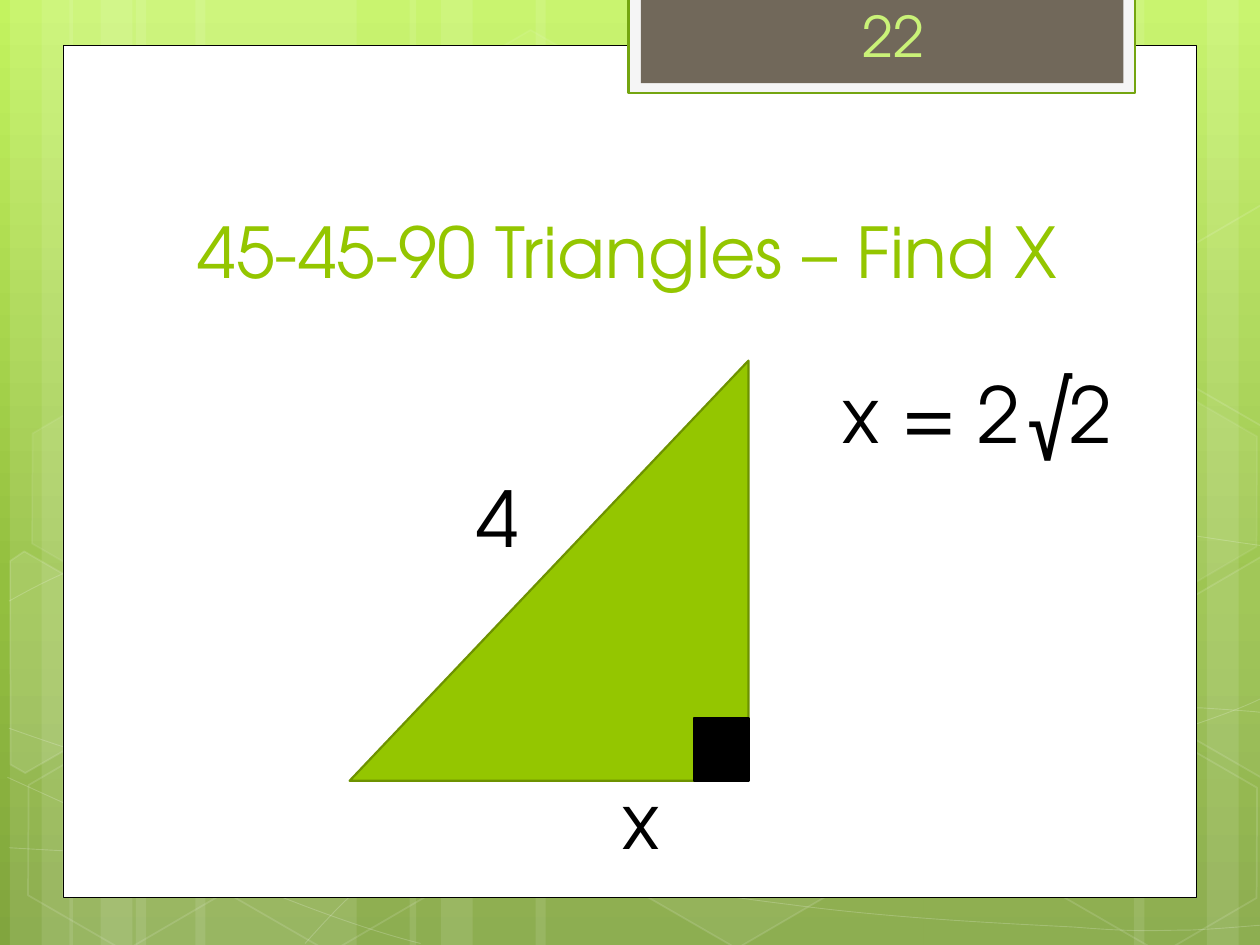
"""Build the 45-45-90 triangle slide."""
from copy import deepcopy

from lxml.etree import SubElement
from pptx import Presentation
from pptx.dml.color import RGBColor
from pptx.enum.shapes import MSO_SHAPE as Shape
from pptx.enum.text import MSO_ANCHOR as Anchor, PP_ALIGN as Align
from pptx.oxml.ns import qn
from pptx.util import Cm, Pt

FONT = "TeX Gyre Adventor"
WIDTH, HEIGHT = 25.4, 19.05
SPACE = 0.43
COLORS = {
    "top": "C3F35F", "middle": "93BF3F", "bottom": "81A53E",
    "white": "FFFFFF", "black": "000000", "frame": "F5F5F5",
    "frame_line": "74A510", "tab": "71685A", "number": "CAF278",
    "green": "94C600", "dark_green": "6D9200",
}
BANDS = [(2.74, 4.45), (0.2, 1.27), (0.84, 2.11), (3.94, 4.45), (1.4, 1.27), (2.03, 2.11),
         (18.62, 4.45), (24.33, 1.27), (22.86, 2.11), (10.8, 7.82), (8.26, 1.27), (8.89, 2.11)]
CURVES = [
    [(0.18, 17.09), (1.55, 17.17), (2.92, 17.25), (4.83, 17.22), (6.73, 17.2), (9.09, 17.15),
     (11.63, 16.89), (14.17, 16.64), (17.78, 16.13), (20.12, 15.67), (22.43, 15.19),
     (24.82, 14.43), (25.58, 14)],
    [(0.18, 12.12), (0.91, 11.71), (1.65, 11.33), (3.07, 10.95), (4.52, 10.57), (6.58, 10.01),
     (8.81, 9.83), (11.07, 9.65), (13.82, 9.63), (16.61, 9.83), (19.41, 10.03),
     (24.05, 10.82), (25.58, 11.02)],
    [(0.15, 15.67), (3.23, 17.07), (6.27, 18.47), (8.48, 19.02)],
    [(0.18, 14.68), (0.97, 14.96), (1.78, 15.24), (3.25, 15.65), (4.72, 16.03), (6.93, 16.66),
     (9.07, 17.09), (11.18, 17.53), (13.84, 17.98), (15.95, 18.24), (18.06, 18.52),
     (20.32, 18.62), (21.67, 18.69), (22.99, 18.8), (23.34, 18.75), (24, 18.75),
     (24.66, 18.72), (25.12, 18.67), (25.58, 18.64)],
    [(6.15, 19.02), (6.6, 18.52), (7.06, 18.01), (7.67, 17.55), (8.28, 17.09), (9.14, 16.59),
     (9.86, 16.23), (10.57, 15.88), (11, 15.72), (11.94, 15.47), (12.85, 15.21),
     (14.55, 14.86), (15.44, 14.68), (16.36, 14.5), (16.48, 14.5), (17.27, 14.45),
     (18.06, 14.38), (19.3, 14.27), (20.17, 14.25), (21.06, 14.22), (22.5, 14.27),
     (22.5, 14.27), (23.07, 14.27), (23.64, 14.27), (24.21, 14.27), (24.66, 14.3),
     (25.1, 14.33), (25.32, 14.35), (25.55, 14.38), (25.48, 14.35), (25.55, 14.38)],
]
HEXAGONS = [(8.48, 0.91, 4, 8), (12.62, 14.96, 6, 12), (0.28, 15.01, 0, 12), (0.36, 7.92, 7, 8),
            (4.42, 15.04, 0, 12), (19.13, 11.51, 10, 12), (21.18, 15.06, 0, 12),
            (21.18, 7.98, 7, 8)]
LEFT_CUT = [(0, 0.31), (0.15, 0), (2.4, 0), (3.51, 1.95), (2.4, 3.86), (2.06, 3.86)]
RIGHT_CUT = [(0, 1.91), (1.09, 0), (1.33, 0), (3.45, 3.67), (3.35, 3.86), (1.12, 3.86)]
CUT_HEXAGONS = [(LEFT_CUT, -0.84, 11.66, 10), (RIGHT_CUT, 23.29, 11.28, 4),
                (RIGHT_CUT, 23.29, 4.19, 0)]


def rgb(name):
    """Return the named colour."""
    return RGBColor.from_string(COLORS[name])


def set_alpha(sp, where, percent):
    """Set the opacity of a solid fill or line."""
    color = sp.element.spPr.find(f"{where}/{qn('a:srgbClr')}")
    SubElement(color, qn("a:alpha")).set("val", str(percent * 1000))


def style(sp, fill=None, line=None, width=1.25, fill_alpha=100, line_alpha=100):
    """Apply fill, line and opacity to a shape."""
    sp.shadow.inherit = False
    if fill and fill_alpha:
        sp.fill.solid()
        sp.fill.fore_color.rgb = rgb(fill)
        if fill_alpha < 100:
            set_alpha(sp, qn("a:solidFill"), fill_alpha)
    else:
        sp.fill.background()
    if line:
        sp.line.color.rgb = rgb(line)
        sp.line.width = Pt(width)
        if line_alpha < 100:
            set_alpha(sp, f"{qn('a:ln')}/{qn('a:solidFill')}", line_alpha)
    else:
        sp.line.fill.background()


def add_box(shapes, kind, x, y, w, h, **look):
    """Add a styled preset shape."""
    sp = shapes.add_shape(kind, Cm(x), Cm(y), Cm(w), Cm(h))
    style(sp, **look)
    return sp


def add_path(shapes, points, close, **look):
    """Add a styled outline through the points."""
    (x, y), *rest = [(Cm(px), Cm(py)) for px, py in points]
    builder = shapes.build_freeform(x, y)
    builder.add_line_segments(rest, close=close)
    sp = builder.convert_to_shape()
    style(sp, **look)
    return sp


def add_curve(shapes, points, **look):
    """Add an open outline of cubic curves."""
    sp = add_path(shapes, points, False, **look)
    outline = sp.element.find(f".//{qn('a:path')}")
    lines = outline.findall(qn("a:lnTo"))
    for i in range(0, len(lines), 3):
        cubic = SubElement(outline, qn("a:cubicBezTo"))
        for line in lines[i:i + 3]:
            cubic.append(line[0])
            outline.remove(line)


def add_text(s, text, x, y, w, h, size=44, color="black", indent=0,
             align=Align.LEFT, anchor=Anchor.TOP):
    """Add a one-line text box."""
    tf = s.shapes.add_textbox(Cm(x), Cm(y), Cm(w), Cm(h)).text_frame
    tf.word_wrap = True
    tf.vertical_anchor = anchor
    tf.margin_left = Cm(0.25 + indent)
    p = tf.paragraphs[0]
    p.alignment = align
    r = p.add_run()
    r.text = text
    r.font.name = FONT
    r.font.size = Pt(size)
    r.font.color.rgb = rgb(color)


def set_background(s):
    """Fill the background with a vertical three-stop gradient."""
    fill = s.background.fill
    fill.gradient()
    fill.gradient_angle = 270
    stops = s.element.find(f".//{qn('a:gsLst')}")
    stops.insert(1, deepcopy(stops[0]))
    looks = (("top", 0), ("middle", 0.62), ("bottom", 1))
    for stop, (name, position) in zip(fill.gradient_stops, looks):
        stop.color.rgb = rgb(name)
        stop.position = position


def add_decoration(s):
    """Add the translucent bands, curves and hexagons."""
    shapes = s.shapes.add_group_shape().shapes
    for x, w in BANDS:
        add_box(shapes, Shape.RECTANGLE, x, 0, w, HEIGHT, fill="white", fill_alpha=10)
    for curve in CURVES:
        add_curve(shapes, curve, line="white", width=0.5, line_alpha=20)
    for x, y, fill_alpha, line_alpha in HEXAGONS:
        sp = add_box(shapes, Shape.HEXAGON, x, y, 4.45, 3.86, fill="white",
                     fill_alpha=fill_alpha, line="white", width=1, line_alpha=line_alpha)
        sp.adjustments[0] = 0.285
        sp.rotation = 30
    for points, x, y, alpha in CUT_HEXAGONS:
        sp = add_path(shapes, [(x + px, y + py) for px, py in points], True, fill="white",
                      fill_alpha=alpha, line="white", width=1, line_alpha=12)
        sp.rotation = 30


def add_panel(s):
    """Add the white panel and the page number tab."""
    add_box(s.shapes, Shape.RECTANGLE, 1.27, 0.91, 22.86, 17.19,
            fill="white", line="black", width=0.5)
    add_box(s.shapes, Shape.RECTANGLE, 12.67, -0.05, 10.21, 1.93, fill="frame", line="frame_line")
    add_box(s.shapes, Shape.RECTANGLE, 12.92, -0.05, 9.73, 1.73, fill="tab")


def add_triangle(s):
    """Add the right triangle with its corner mark."""
    shapes = s.shapes.add_group_shape().shapes
    sp = add_box(shapes, Shape.RIGHT_TRIANGLE, 7.05, 7.27, 8.04, 8.47,
                 fill="green", line="dark_green")
    sp.element.spPr.xfrm.set("flipH", "1")
    add_box(shapes, Shape.RECTANGLE, 13.99, 14.47, 1.1, 1.27, fill="black", line="black")


def main():
    """Build and save the slide."""
    prs = Presentation()
    prs.slide_width, prs.slide_height = Cm(WIDTH), Cm(HEIGHT)
    s = prs.slides.add_slide(prs.slide_layouts[6])
    set_background(s)
    add_decoration(s)
    add_panel(s)
    add_text(s, "45-45-90 Triangles – Find X", 2.9, 2.84, 19.5, 3.18, size=40, color="green",
             align=Align.CENTER, anchor=Anchor.BOTTOM)
    add_triangle(s)
    add_text(s, "4", 6.77, 9.37, 4.66, 2.14, indent=6 * SPACE)
    add_text(s, "x", 11.43, 15.45, 2.54, 2.14, indent=2 * SPACE)
    add_text(s, "x = 2√2", 15.88, 7.27, 7.41, 2.14, indent=2 * SPACE)
    add_text(s, "22", 17.13, -0.1, 3.07, 1.62, size=32, color="number")
    prs.save("out.pptx")


if __name__ == "__main__":
    main()
